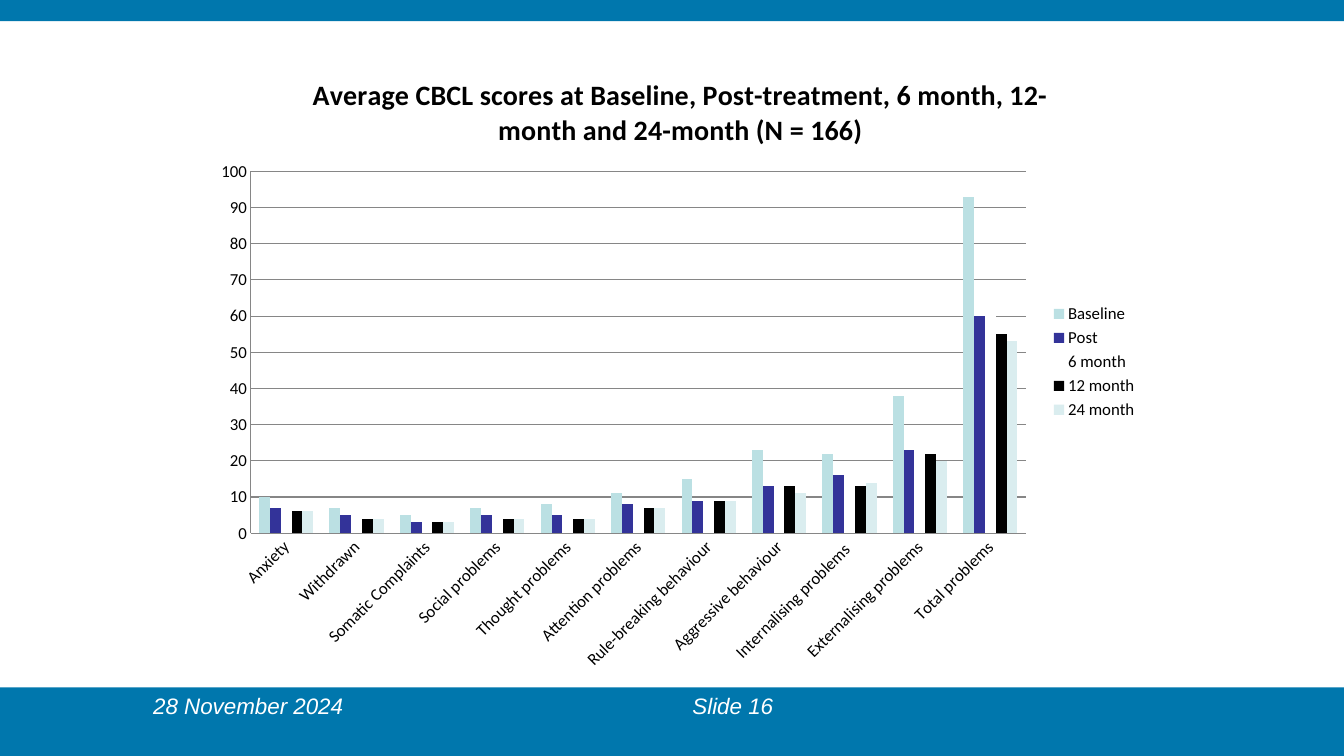
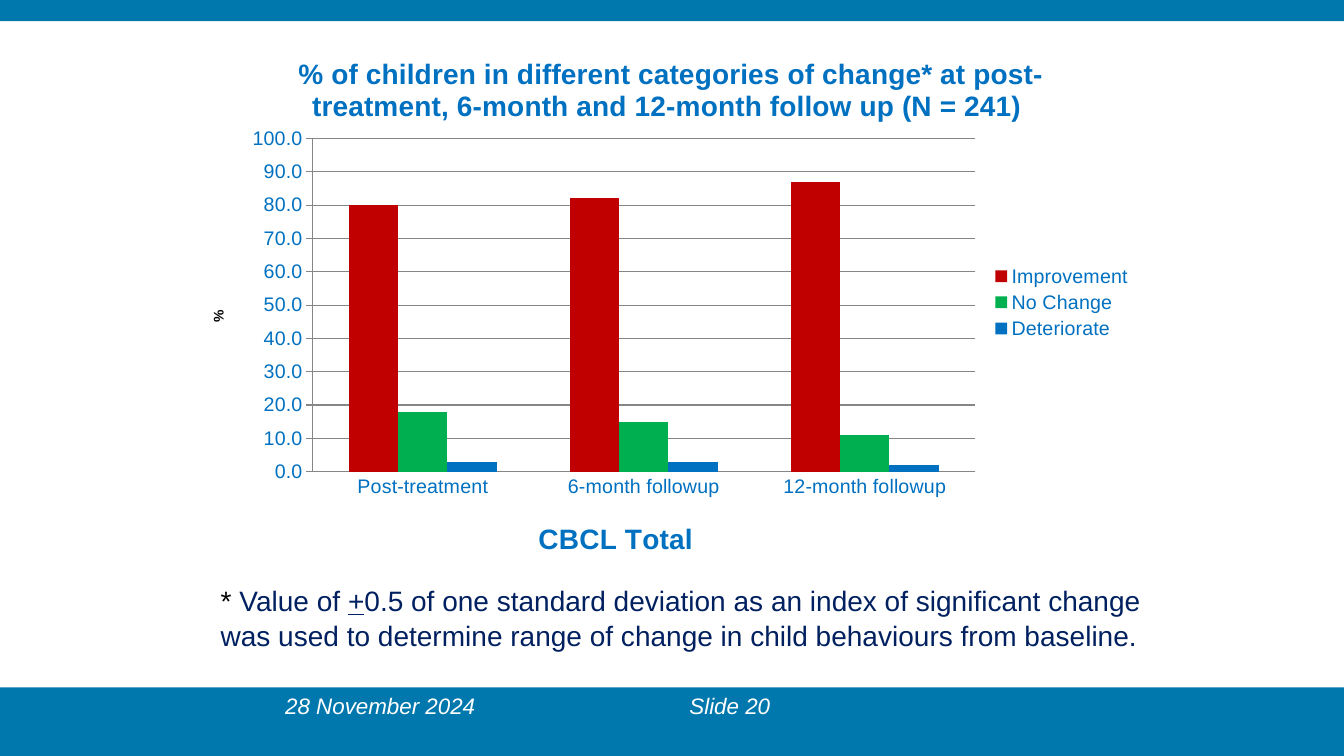
"""Build two slides of CBCL outcome charts with shared bands and footers."""
from dataclasses import dataclass
from typing import Any, Optional

from lxml import etree
from pptx import Presentation
from pptx.chart.axis import ValueAxis
from pptx.chart.chart import Chart
from pptx.chart.data import CategoryChartData
from pptx.dml.color import RGBColor
from pptx.dml.line import LineFormat
from pptx.enum.chart import XL_CHART_TYPE, XL_LEGEND_POSITION, XL_TICK_MARK
from pptx.enum.shapes import MSO_SHAPE
from pptx.oxml.ns import qn
from pptx.slide import Slide
from pptx.text.text import Font
from pptx.util import Emu, Pt

CLUSTERED = XL_CHART_TYPE.COLUMN_CLUSTERED
LEGEND_RIGHT = XL_LEGEND_POSITION.RIGHT
TICK_NONE, TICK_OUT = XL_TICK_MARK.NONE, XL_TICK_MARK.OUTSIDE
RECTANGLE = MSO_SHAPE.RECTANGLE

EMU_PER_PX = 9144
SLIDE_WIDTH, SLIDE_HEIGHT = 1333, 750
FOOTER_TOP, FOOTER_TEXT_HEIGHT = 682, 52
BLANK_LAYOUT = 6

COLORS = {
    "band": "0077AD", "white": "FFFFFF", "black": "000000", "grid": "868686",
    "pale teal": "BBE0E3", "indigo": "333399", "mist": "DAEDEF",
    "red": "C00000", "green": "00B050", "blue": "0070C0", "navy": "002060",
}
FOOTER_STYLE = {"name": "Arial", "size": Pt(16), "italic": True, "color": "white"}
NOTE_STYLE = {"name": "Arial", "size": Pt(20), "color": "navy"}


@dataclass(frozen=True)
class Box:
    """A rectangle in whole px."""
    left: int
    top: int
    width: int
    height: int

    def emu(self) -> tuple[Emu, ...]:
        """Return the rectangle in EMU."""
        return tuple(Emu(side * EMU_PER_PX)
                     for side in (self.left, self.top, self.width, self.height))


@dataclass(frozen=True)
class Series:
    """One set of bars."""
    name: str
    color: str
    scores: tuple[int, ...]


@dataclass(frozen=True)
class AxisTitle:
    """An axis caption with its place as fractions of the chart."""
    text: str
    size: int
    color: str
    x: float
    y: float


@dataclass(frozen=True)
class ScoreChart:
    """A column chart with its wording, look and plot area."""
    box: Box
    title: str
    font: str
    color: str
    label_size: int
    number_format: str
    value_tick: Any
    categories: tuple[str, ...]
    series: tuple[Series, ...]
    plot_area: dict[str, float]
    category_title: Optional[AxisTitle] = None
    value_title: Optional[AxisTitle] = None
    label_turn: int = 0


@dataclass(frozen=True)
class Footer:
    """One piece of footer text."""
    text: str
    left: int
    width: int


BANDS = (Box(0, FOOTER_TOP, SLIDE_WIDTH, SLIDE_HEIGHT - FOOTER_TOP),
         Box(0, 0, SLIDE_WIDTH, 21))

AVERAGE_SCORES = ScoreChart(
    box=Box(202, 44, 937, 630),
    title="Average CBCL scores at Baseline, Post-treatment, 6 month, "
          "12-month and 24-month (N = 166)",
    font="Calibri", color="black", label_size=12, number_format="0",
    value_tick=TICK_NONE,
    categories=("Anxiety", "Withdrawn", "Somatic Complaints", "Social problems",
                "Thought problems", "Attention problems",
                "Rule-breaking behaviour", "Aggressive behaviour",
                "Internalising problems ", "Externalising problems",
                "Total problems"),
    series=(
        Series("Baseline", "pale teal", (10, 7, 5, 7, 8, 11, 15, 23, 22, 38, 93)),
        Series("Post", "indigo", (7, 5, 3, 5, 5, 8, 9, 13, 16, 23, 60)),
        Series("6 month", "white", (7, 5, 3, 4, 5, 8, 9, 14, 15, 23, 60)),
        Series("12 month", "black", (6, 4, 3, 4, 4, 7, 9, 13, 13, 22, 55)),
        Series("24 month", "mist", (6, 4, 3, 4, 4, 7, 9, 11, 14, 20, 53)),
    ),
    plot_area={"x": 0.05, "y": 0.2, "w": 0.82, "h": 0.57},
    label_turn=-45,
)

CHANGE_CATEGORIES = ScoreChart(
    box=Box(186, 29, 953, 542),
    title="% of children in different categories of change* at post-treatment, "
          "6-month and 12-month follow up (N = 241) ",
    font="Arial", color="blue", label_size=14, number_format="0.0",
    value_tick=TICK_OUT,
    categories=("Post-treatment", "6-month followup", "12-month followup"),
    series=(
        Series("Improvement ", "red", (80, 82, 87)),
        Series("No Change", "green", (18, 15, 11)),
        Series("Deteriorate", "blue", (3, 3, 2)),
    ),
    plot_area={"x": 0.13, "y": 0.2, "w": 0.69, "h": 0.61},
    category_title=AxisTitle("CBCL Total", 20, "blue", 0.36, 0.89),
    value_title=AxisTitle("%", 10, "black", 0.02, 0.51),
)

NOTE_RUNS = (
    ("* ", {"color": "black"}),
    ("Value of ", {}),
    ("+", {"underline": True}),
    ("0.5 of one standard deviation as an index of significant change was used "
     "to determine range of change in child behaviours from baseline.", {}),
)


def rgb(color: str) -> RGBColor:
    """Look up a colour by name."""
    return RGBColor.from_string(COLORS[color])


def style_font(font: Font, style: dict[str, Any]) -> None:
    """Apply a dict of format values to a font."""
    for attribute, setting in style.items():
        if attribute == "color":
            font.color.rgb = rgb(setting)
        else:
            setattr(font, attribute, setting)


def style_line(line: LineFormat) -> None:
    """Give an axis or grid line the shared look."""
    line.color.rgb = rgb("grid")
    line.width = Pt(0.75)


def set_layout(parent: Any, index: int, fractions: dict[str, float]) -> None:
    """Fix the place of a chart part as fractions of the chart."""
    for previous in parent.findall(qn("c:layout")):
        parent.remove(previous)
    layout = etree.Element(qn("c:layout"))
    manual = etree.SubElement(layout, qn("c:manualLayout"))
    settings: dict[str, Any] = {"xMode": "edge", "yMode": "edge", **fractions}
    if "w" in fractions:
        settings = {"layoutTarget": "inner", **settings}
    for tag, setting in settings.items():
        etree.SubElement(manual, qn(f"c:{tag}")).set("val", str(setting))
    parent.insert(index, layout)


def add_axis_title(chart: Chart, axis: Any, caption: AxisTitle, font: str) -> None:
    """Write and place the caption of an axis."""
    axis.has_title = True
    frame = axis.axis_title.text_frame
    frame.text = caption.text
    style_font(frame.paragraphs[0].runs[0].font,
               {"name": font, "size": Pt(caption.size), "bold": True,
                "color": caption.color})
    is_value = isinstance(axis, ValueAxis)
    tag = "valAx" if is_value else "catAx"
    title = chart.element.xpath(f".//c:{tag}/c:title")[0]
    set_layout(title, 1, {"x": caption.x, "y": caption.y})
    if is_value:
        title.xpath(".//a:bodyPr")[0].set("rot", "-5400000")


def add_score_chart(slide: Slide, spec_chart: ScoreChart) -> None:
    """Draw a clustered column chart."""
    scores = CategoryChartData(number_format=spec_chart.number_format)
    scores.categories = spec_chart.categories
    for bars in spec_chart.series:
        scores.add_series(bars.name, bars.scores)
    chart = slide.shapes.add_chart(CLUSTERED, *spec_chart.box.emu(), scores).chart
    label_style = {"name": spec_chart.font, "size": Pt(spec_chart.label_size),
                   "color": spec_chart.color}
    style_font(chart.font, {**label_style, "size": Pt(10), "color": "black"})

    chart.has_title = True
    heading = chart.chart_title.text_frame
    heading.text = spec_chart.title
    style_font(heading.paragraphs[0].runs[0].font,
               {**label_style, "size": Pt(20), "bold": True})
    set_layout(chart.element.xpath("./c:chart/c:title")[0], 1,
               {"x": 0.11, "y": 0.04})
    set_layout(chart.element.xpath(".//c:plotArea")[0], 0, spec_chart.plot_area)

    chart.has_legend = True
    chart.legend.position = LEGEND_RIGHT
    chart.legend.include_in_layout = False
    style_font(chart.legend.font, label_style)

    plot = chart.plots[0]
    plot.gap_width, plot.overlap, plot.vary_by_categories = 150, 0, False
    for drawn, bars in zip(plot.series, spec_chart.series):
        drawn.format.fill.solid()
        drawn.format.fill.fore_color.rgb = rgb(bars.color)
        drawn.invert_if_negative = False

    axes = ((chart.category_axis, TICK_NONE, spec_chart.category_title),
            (chart.value_axis, spec_chart.value_tick, spec_chart.value_title))
    for axis, tick, caption in axes:
        axis.major_tick_mark, axis.minor_tick_mark = tick, TICK_NONE
        style_font(axis.tick_labels.font, label_style)
        style_line(axis.format.line)
        if caption:
            add_axis_title(chart, axis, caption, spec_chart.font)
    values = chart.value_axis
    values.minimum_scale, values.maximum_scale, values.major_unit = 0, 100, 10
    values.tick_labels.number_format = spec_chart.number_format
    values.tick_labels.number_format_is_linked = False
    values.has_major_gridlines = True
    style_line(values.major_gridlines.format.line)
    if spec_chart.label_turn:
        body = chart.element.xpath(".//c:catAx/c:txPr/a:bodyPr")[0]
        body.set("rot", str(spec_chart.label_turn * 60000))


def add_text(slide: Slide, box: Box, runs: tuple, style: dict[str, Any],
             line_spacing: float = 1.0) -> None:
    """Write one wrapped paragraph of formatted runs."""
    frame = slide.shapes.add_textbox(*box.emu()).text_frame
    frame.word_wrap = True
    paragraph = frame.paragraphs[0]
    paragraph.line_spacing = line_spacing
    for words, changes in runs:
        run = paragraph.add_run()
        run.text = words
        style_font(run.font, {**style, **changes})


def add_footers(slide: Slide, footers: tuple[Footer, ...]) -> None:
    """Write the date and slide number on the lower band."""
    for footer in footers:
        box = Box(footer.left, FOOTER_TOP, footer.width, FOOTER_TEXT_HEIGHT)
        add_text(slide, box, ((footer.text, {}),), FOOTER_STYLE)


def add_master_bands(slide: Slide) -> None:
    """Put the coloured bands on the slide master."""
    master_tree = slide.slide_layout.slide_master.shapes.element
    for number, box in enumerate(BANDS):
        band = slide.shapes.add_shape(RECTANGLE, *box.emu())
        band.shadow.inherit = False
        band.fill.solid()
        band.fill.fore_color.rgb = rgb("band")
        band.line.fill.background()
        band.element.nvSpPr.cNvPr.set("id", str(100 + number))
        master_tree.insert(2 + number, band.element)


def main() -> None:
    """Build and save the presentation."""
    deck = Presentation()
    deck.slide_width = Emu(SLIDE_WIDTH * EMU_PER_PX)
    deck.slide_height = Emu(SLIDE_HEIGHT * EMU_PER_PX)
    layout = deck.slide_layouts[BLANK_LAYOUT]

    averages = deck.slides.add_slide(layout)
    add_master_bands(averages)
    add_score_chart(averages, AVERAGE_SCORES)
    add_footers(averages, (Footer("28 November 2024", 142, 451),
                           Footer("Slide 16", 677, 200)))

    changes = deck.slides.add_slide(layout)
    add_footers(changes, (Footer("28 November 2024", 273, 339),
                          Footer("Slide 20", 674, 150)))
    add_score_chart(changes, CHANGE_CATEGORIES)
    add_text(changes, Box(209, 572, 937, 77), NOTE_RUNS, NOTE_STYLE, 1.05)
    deck.save("out.pptx")


if __name__ == "__main__":
    main()
